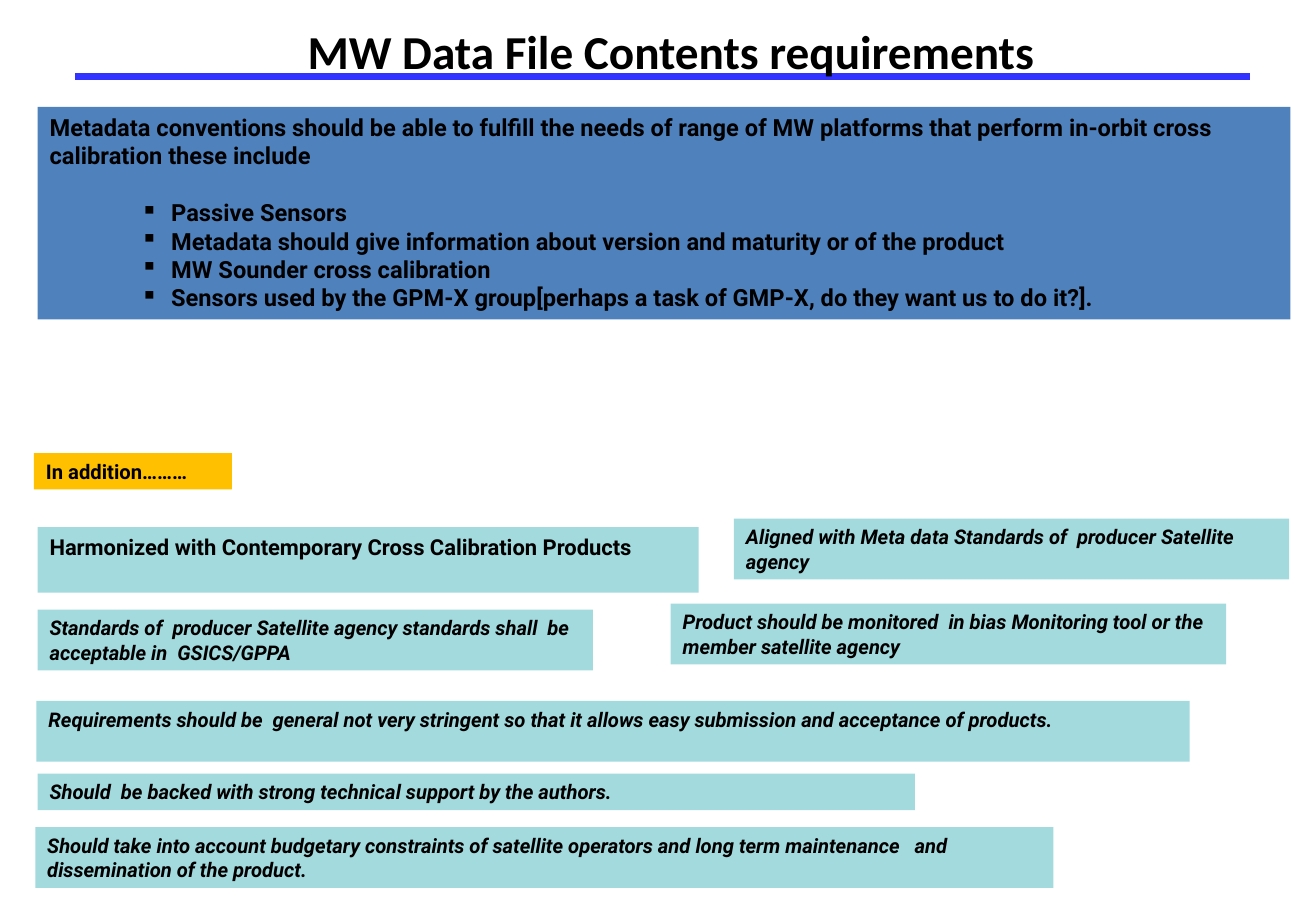
"""Build the slide on MW data file content requirements."""
from lxml.etree import SubElement
from pptx import Presentation
from pptx.dml.color import RGBColor
from pptx.enum.shapes import MSO_CONNECTOR, MSO_SHAPE
from pptx.enum.text import MSO_ANCHOR, MSO_AUTO_SIZE, PP_ALIGN
from pptx.oxml.ns import qn
from pptx.util import Pt

TITLE = "MW Data File Contents requirements"
INTRO = ("Metadata conventions should be able to fulfill the needs of range of MW platforms "
         "that perform in-orbit cross calibration these include")
NEEDS = [
    "Passive Sensors",
    "Metadata should give information about version and maturity or of the product",
    "MW Sounder cross calibration",
    "Sensors used by the GPM-X group[perhaps a task of GMP-X, do they want us to do it?].",
]
BLUE, TEAL, GOLD, RULE, BLACK = "4F81BD", "A2DADE", "FFC000", "3333FF", "000000"
BOXES = [
    ((31, 88, 1031, 175), BLUE, 14, False, [INTRO] + NEEDS),
    ((28, 373, 163, 30), GOLD, 12, False, ["In addition………"]),
    ((31, 434, 544, 54), TEAL, 13, False,
     ["Harmonized with Contemporary Cross Calibration Products"]),
    ((604, 427, 457, 50), TEAL, 12, True,
     ["Aligned with Meta data Standards of  producer Satellite agency"]),
    ((31, 502, 457, 50), TEAL, 12, True,
     ["Standards of  producer Satellite agency standards shall  be  acceptable in  GSICS/GPPA"]),
    ((552, 497, 457, 50), TEAL, 12, True,
     ["Product should be monitored  in bias Monitoring tool or the member satellite agency"]),
    ((30, 577, 949, 50), TEAL, 12, True,
     ["Requirements should be  general not very stringent so that it allows easy submission "
      "and acceptance of products."]),
    ((31, 637, 722, 30), TEAL, 12, True,
     ["Should  be backed with strong technical support by the authors."]),
    ((29, 681, 838, 50), TEAL, 12, True,
     ["Should take into account budgetary constraints of satellite operators and long term "
      "maintenance   and dissemination of the product."]),
]


def px(n):
    return n * 9144


def color(code):
    return RGBColor.from_string(code)


def style(para, face, size, slant, align):
    para.alignment = align
    for run in para.runs:
        font = run.font
        font.name, font.size = face, Pt(size)
        font.bold, font.italic = True, slant
        font.color.rgb = color(BLACK)


def bullet(para):
    props = para._p.get_or_add_pPr()
    props.set("marL", str(px(100)))
    props.set("indent", str(px(-25)))
    SubElement(props, qn("a:buChar")).set("char", "▪")


def add_title(slide):
    title = slide.shapes.title
    title.left, title.top, title.width, title.height = map(px, (85, 0, 934, 84))
    frame = title.text_frame
    frame.text = TITLE
    frame.word_wrap = True
    frame.auto_size = MSO_AUTO_SIZE.NONE
    frame.vertical_anchor = MSO_ANCHOR.MIDDLE
    style(frame.paragraphs[0], "Calibri", 28, False, PP_ALIGN.CENTER)
    line = slide.shapes.add_connector(MSO_CONNECTOR.STRAIGHT, *map(px, (62, 63, 1029, 63)))
    line.line.color.rgb = color(RULE)
    line.line.width = Pt(4.5)
    SubElement(line.element.spPr, qn("a:effectLst"))
    title.element.addprevious(line.element)


def add_box(slide, place, fill, size, slant, lines):
    box = slide.shapes.add_shape(MSO_SHAPE.RECTANGLE, *map(px, place))
    box.shadow.inherit = False
    box.fill.solid()
    box.fill.fore_color.rgb = color(fill)
    box.line.fill.background()
    frame = box.text_frame
    frame.word_wrap = True
    frame.vertical_anchor = MSO_ANCHOR.TOP
    for i, text in enumerate(lines):
        para = frame.add_paragraph() if i else frame.paragraphs[0]
        para.text = text
        if i:
            bullet(para)
        if i == 1:
            para.space_before = Pt(17)
        style(para, "Roboto", size, slant, PP_ALIGN.LEFT)


def main():
    deck = Presentation()
    deck.slide_width, deck.slide_height = px(1083), px(750)
    slide = deck.slides.add_slide(deck.slide_layouts[5])
    add_title(slide)
    for box in BOXES:
        add_box(slide, *box)
    deck.save("out.pptx")


if __name__ == "__main__":
    main()
